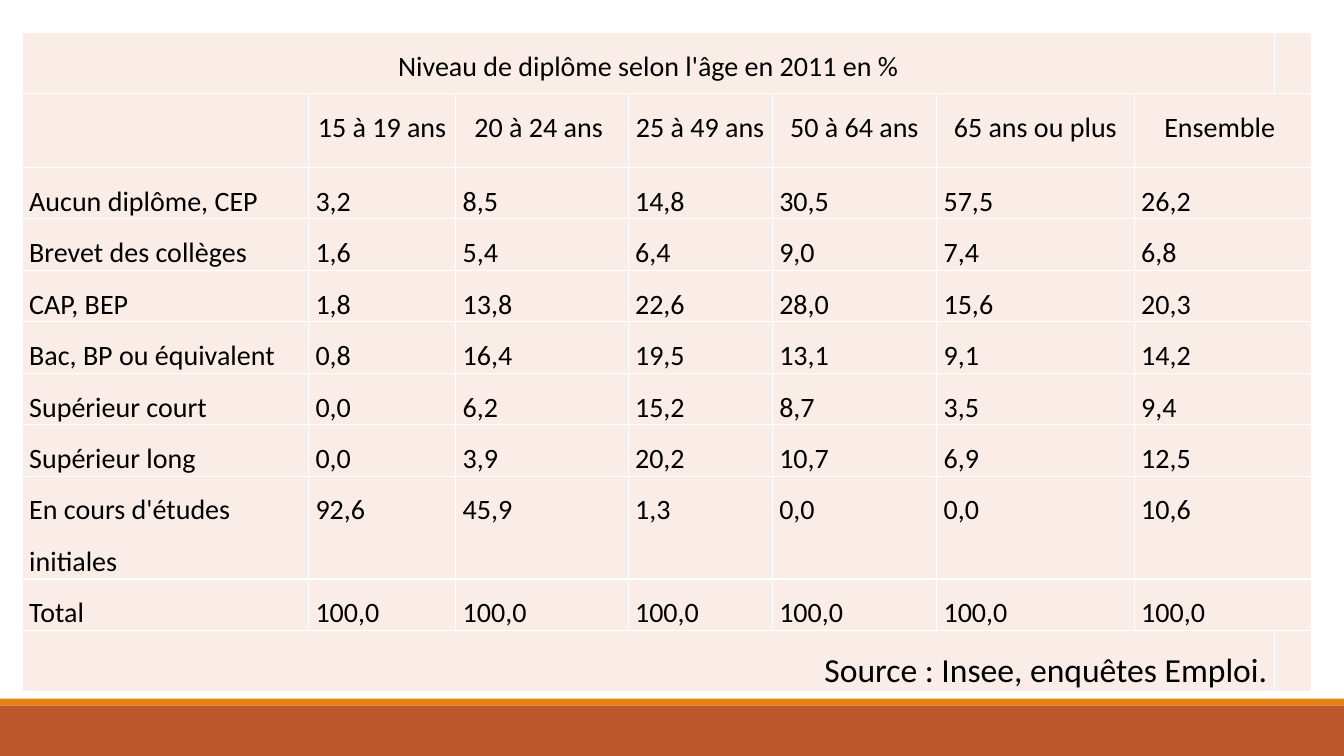
from dataclasses import dataclass
from lxml import etree
from pptx import Presentation
from pptx import util as u
from pptx.dml.color import RGBColor
from pptx.enum import shapes, text
from pptx.oxml import ns

WIDTH, HEIGHT = 13.33, 7.5
FONT, INK, TINT, WHITE = "Calibri", "000000", "FAEDE7", "FFFFFF"
LEFT, CENTER, RIGHT = text.PP_ALIGN.LEFT, text.PP_ALIGN.CENTER, text.PP_ALIGN.RIGHT

# Table grid, in inches
TABLE_LEFT, TABLE_TOP = 0.22, 0.32
COLUMNS = [2.84, 1.46, 1.71, 1.43, 1.63, 1.96, 1.39, 0.37]
LINE = 0.51
ROWS = [0.61, 0.73] + [LINE] * 6 + [2 * LINE, LINE, 0.61]
LAST = len(COLUMNS) - 1

TITLE = "Niveau de diplôme selon l'âge en 2011 en %"
SOURCE = "Source : Insee, enquêtes Emploi."
AGES = ["", "15 à 19 ans", "20 à 24 ans ", "25 à 49 ans", "50 à 64 ans",
        "65 ans ou plus", "Ensemble "]
LEVELS = [
    ["Aucun diplôme, CEP", "3,2", "8,5", "14,8", "30,5", "57,5", "26,2"],
    ["Brevet des collèges", "1,6", "5,4", "6,4", "9,0", "7,4", "6,8"],
    ["CAP, BEP", "1,8", "13,8", "22,6", "28,0", "15,6", "20,3"],
    ["Bac, BP ou équivalent", "0,8", "16,4", "19,5", "13,1", "9,1", "14,2"],
    ["Supérieur court", "0,0", "6,2", "15,2", "8,7", "3,5", "9,4"],
    ["Supérieur long", "0,0", "3,9", "20,2", "10,7", "6,9", "12,5"],
    ["En cours d'études initiales", "92,6", "45,9", "1,3", "0,0", "0,0", "10,6"],
    ["Total"] + ["100,0"] * 6,
]


@dataclass
class Band:
    top: float  # share of the slide's height
    height: float
    color: str


@dataclass
class TableRow:
    texts: list[str]
    align: text.PP_ALIGN
    merge: tuple[int, int]  # first and last merged column
    size: int = 20


BANDS = [Band(0.933, 0.067, "BD582C"), Band(0.924, 0.009, "E48312")]
TABLE_ROWS = [
    TableRow([TITLE], CENTER, (0, LAST - 1)),
    TableRow(AGES, CENTER, (LAST - 1, LAST)),
    *[TableRow(level, LEFT, (LAST - 1, LAST)) for level in LEVELS],
    TableRow([SOURCE], RIGHT, (0, LAST - 1), 24),
]


def rgb(color: str) -> RGBColor:
    return RGBColor.from_string(color)


def draw_band(slide, band: Band) -> None:
    shape = slide.shapes.add_shape(
        shapes.MSO_SHAPE.RECTANGLE, 0, u.Inches(band.top * HEIGHT),
        u.Inches(WIDTH), u.Inches(band.height * HEIGHT))
    shape.shadow.inherit = False
    shape.fill.solid()
    shape.fill.fore_color.rgb = rgb(band.color)
    shape.line.fill.background()


def style_cell(cell) -> None:
    cell.margin_left = cell.margin_right = u.Inches(0.07)
    cell.margin_top = cell.margin_bottom = 0
    cell.fill.solid()
    cell.fill.fore_color.rgb = rgb(TINT)
    # Borders come before the fill in the cell properties
    properties = cell._tc.get_or_add_tcPr()
    for index, side in enumerate(("a:lnL", "a:lnR", "a:lnT", "a:lnB")):
        border = etree.Element(ns.qn(side), w=str(u.Pt(1)))
        fill = etree.SubElement(border, ns.qn("a:solidFill"))
        etree.SubElement(fill, ns.qn("a:srgbClr"), val=WHITE)
        properties.insert(index, border)


def write_cell(cell, content: str, row: TableRow) -> None:
    paragraph = cell.text_frame.paragraphs[0]
    paragraph.text = content
    paragraph.alignment = row.align
    paragraph.line_spacing = 1.5
    paragraph.font.name = FONT
    paragraph.font.size = u.Pt(row.size)
    paragraph.font.color.rgb = rgb(INK)


def draw_table(slide) -> None:
    table = slide.shapes.add_table(
        len(ROWS), len(COLUMNS), u.Inches(TABLE_LEFT), u.Inches(TABLE_TOP),
        u.Inches(sum(COLUMNS)), u.Inches(sum(ROWS))).table
    table.first_row = table.horz_banding = False
    for column, width in zip(table.columns, COLUMNS):
        column.width = u.Inches(width)
    for row, height in zip(table.rows, ROWS):
        row.height = u.Inches(height)
    for cell in table.iter_cells():
        style_cell(cell)
    for index, row in enumerate(TABLE_ROWS):
        first, last = row.merge
        table.cell(index, first).merge(table.cell(index, last))
        for position, content in enumerate(row.texts):
            if content:
                write_cell(table.cell(index, position), content, row)


def main() -> None:
    presentation = Presentation()
    presentation.slide_width = u.Inches(WIDTH)
    presentation.slide_height = u.Inches(HEIGHT)
    slide = presentation.slides.add_slide(presentation.slide_layouts[6])
    # Footer bands
    for band in BANDS:
        draw_band(slide, band)
    # Diploma levels by age
    draw_table(slide)
    presentation.save("out.pptx")


if __name__ == "__main__":
    main()
